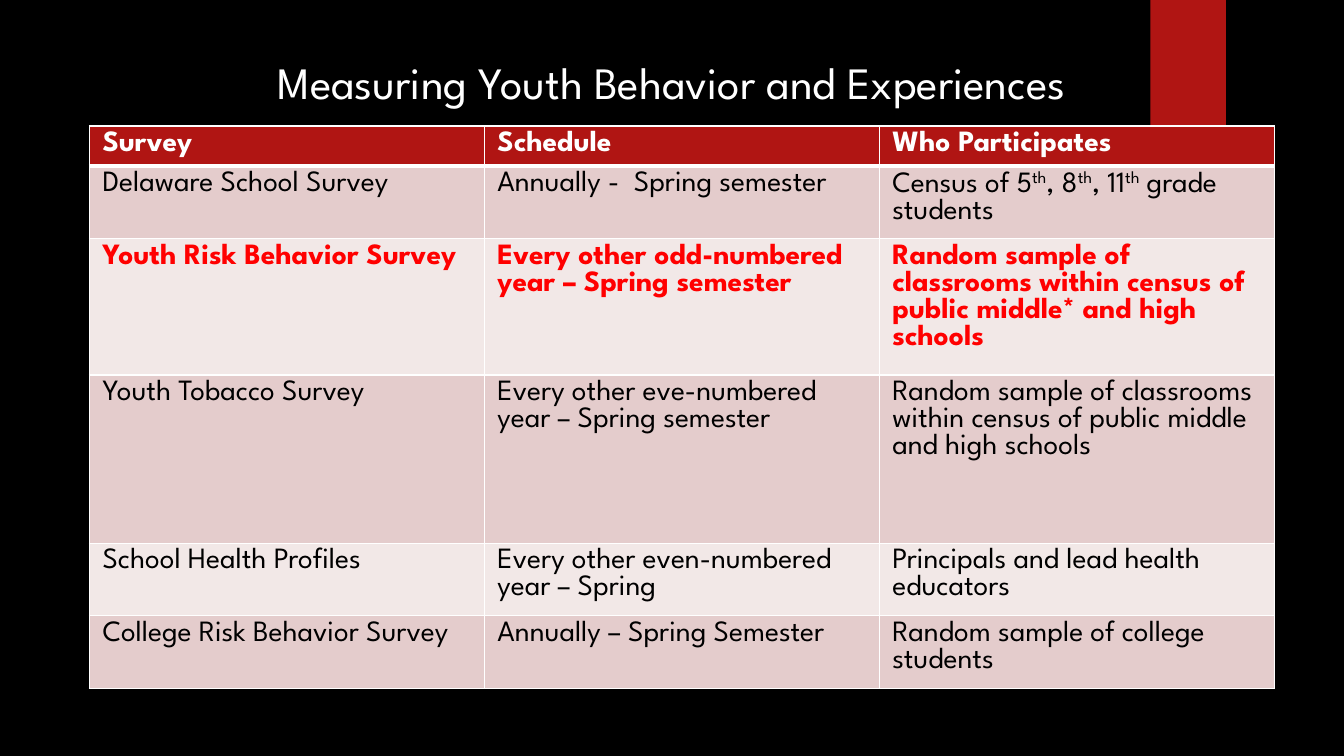
from dataclasses import dataclass

from pptx import Presentation
from pptx.dml.color import RGBColor as Color
from pptx.enum.shapes import MSO_SHAPE as Shape
from pptx.enum.text import MSO_ANCHOR as Anchor, MSO_AUTO_SIZE as AutoSize, PP_ALIGN as Align
from pptx.oxml import parse_xml
from pptx.oxml.ns import nsdecls
from pptx.util import Pt

TITLE = "Measuring Youth Behavior and Experiences"
GRADES = ["Census of 5", "th", ", 8", "th", ", 11", "th", " grade students"]
SURVEYS = [
    (28.8, ["Survey", "Schedule", "Who Participates"]),
    (51.84, ["Delaware School Survey", "Annually -  Spring semester", GRADES]),
    (97.2, ["Youth Risk Behavior Survey",
            "Every other odd-numbered year – Spring semester",
            "Random sample of classrooms within census of public middle* and high schools"]),
    (120.24, ["Youth Tobacco Survey",
              "Every other eve-numbered year – Spring semester",
              "Random sample of classrooms within census of public middle and high schools"]),
    (51.84, ["School Health Profiles", "Every other even-numbered year – Spring",
             "Principals and lead health educators"]),
    (51.84, ["College Risk Behavior Survey", "Annually – Spring Semester",
             "Random sample of college students"]),
]
HEADER_ROW, FEATURED_ROW = 0, 2


@dataclass(frozen=True)
class Theme:
    font: str = "League Spartan"
    title_size: int = 32
    table_size: int = 21
    black: str = "000000"
    white: str = "FFFFFF"
    accent: str = "B01513"
    featured: str = "FF0000"
    bands: tuple = ("F2E8E7", "E4CCCC")


THEME = Theme()


def style_font(para, size, color, bold=False):
    font = para.font
    font.name, font.size, font.bold = THEME.font, Pt(size), bold
    font.color.rgb = Color.from_string(color)


def paint(fill, color):
    fill.solid()
    fill.fore_color.rgb = Color.from_string(color)


def add_title(page):
    title = page.shapes.title
    title.left, title.top, title.width, title.height = Pt(66), Pt(28.8), Pt(828), Pt(71.3)
    frame = title.text_frame
    frame.text = TITLE
    frame.word_wrap = True
    frame.auto_size = AutoSize.NONE
    frame.vertical_anchor = Anchor.MIDDLE
    frame.margin_bottom = Pt(16.5)
    para = frame.paragraphs[0]
    para.alignment = Align.CENTER
    style_font(para, THEME.title_size, THEME.white)


def add_ribbon(page):
    ribbon = page.shapes.add_shape(Shape.RECTANGLE, Pt(821.7), 0, Pt(54), Pt(90))
    ribbon.shadow.inherit = False
    paint(ribbon.fill, THEME.accent)
    ribbon.line.fill.background()


def add_borders(cell, row):
    widths = {
        "lnL": 1,
        "lnR": 1,
        "lnT": 3 if row == HEADER_ROW + 1 else 1,
        "lnB": 3 if row == HEADER_ROW else 1,
    }
    properties = cell._tc.get_or_add_tcPr()
    for side, width in widths.items():
        properties.append(parse_xml(
            f'<a:{side} {nsdecls("a")} w="{Pt(width)}"><a:solidFill>'
            f'<a:srgbClr val="{THEME.white}"/></a:solidFill></a:{side}>'))


def fill_cell(cell, row, content):
    cell.margin_left = cell.margin_right = Pt(9.36)
    cell.margin_top = cell.margin_bottom = Pt(3.6)
    add_borders(cell, row)
    paint(cell.fill, THEME.accent if row == HEADER_ROW else THEME.bands[row % 2])
    para = cell.text_frame.paragraphs[0]
    for index, text in enumerate([content] if isinstance(content, str) else content):
        span = para.add_run()
        span.text = text
        if index % 2:
            span._r.get_or_add_rPr().set("baseline", "30000")
    color = {HEADER_ROW: THEME.white, FEATURED_ROW: THEME.featured}.get(row, THEME.black)
    style_font(para, THEME.table_size, color, row in (HEADER_ROW, FEATURED_ROW))


def add_survey_table(page):
    columns = len(SURVEYS[0][1])
    height = sum(row_height for row_height, _ in SURVEYS)
    table = page.shapes.add_table(
        len(SURVEYS), columns, Pt(63.9), Pt(90), Pt(846.3), Pt(height)).table
    for row, (row_height, contents) in enumerate(SURVEYS):
        table.rows[row].height = Pt(row_height)
        for column, content in enumerate(contents):
            fill_cell(table.cell(row, column), row, content)


def main():
    deck = Presentation()
    deck.slide_width, deck.slide_height = Pt(960), Pt(540)
    page = deck.slides.add_slide(deck.slide_layouts[5])
    paint(page.background.fill, THEME.black)
    add_title(page)
    add_ribbon(page)
    add_survey_table(page)
    deck.save("out.pptx")


if __name__ == "__main__":
    main()
